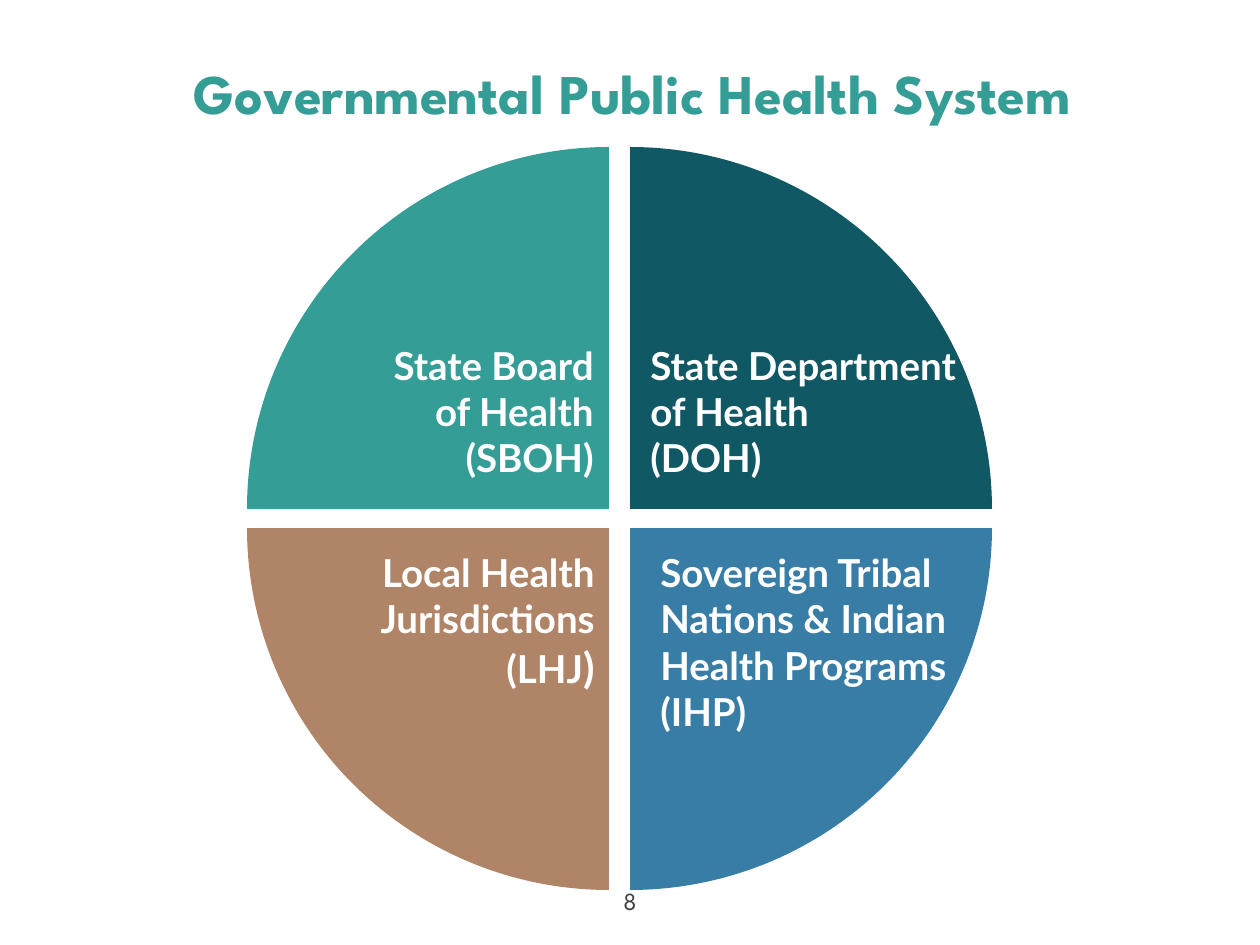
"""Build the slide of the governmental public health system as four quadrants."""
from pptx import Presentation
from pptx.dml.color import RGBColor
from pptx.enum.shapes import MSO_SHAPE
from pptx.enum.text import MSO_ANCHOR as Anchor, PP_ALIGN as Align
from pptx.util import Emu, Pt

TEAL = RGBColor(0x34, 0x9D, 0x96)
DARK_TEAL = RGBColor(0x11, 0x58, 0x65)
BLUE = RGBColor(0x38, 0x7D, 0xA6)
BROWN = RGBColor(0xAF, 0x84, 0x67)
GREY = RGBColor(0x40, 0x40, 0x40)
WHITE = RGBColor(0xFF, 0xFF, 0xFF)
WEDGE = 362
LEFT, RIGHT, TOP, BOTTOM = 247, 630, 147, 528


def px(*lengths):
    return [Emu(round(length * 914400 / 126)) for length in lengths]


def add_text(box, paragraphs, size=22, font="Lato", color=WHITE, bold=True,
             align=Align.LEFT, anchor=Anchor.TOP, spacing=None):
    frame = slide.shapes.add_textbox(*px(*box)).text_frame
    frame.word_wrap = True
    frame.vertical_anchor = anchor
    for index, pieces in enumerate(paragraphs):
        paragraph = frame.add_paragraph() if index else frame.paragraphs[0]
        paragraph.alignment = align
        paragraph.line_spacing = spacing
        for number, line in enumerate(pieces):
            words, points = line if isinstance(line, tuple) else (line, size)
            run = paragraph.add_run()
            run.text = words
            run.font.size = Pt(points)
            run.font.name = font
            run.font.bold = bold
            run.font.color.rgb = color


deck = Presentation()
deck.slide_width, deck.slide_height = px(1260, 945)
slide = deck.slides.add_slide(deck.slide_layouts[6])

add_text((54, 3, 1158, 186), [["Governmental Public Health System"]], size=32,
         font="League Spartan", color=TEAL, align=Align.CENTER,
         anchor=Anchor.MIDDLE, spacing=0.9)
add_text((417, 876, 426, 50), [["8"]], size=14, font="League Spartan",
         color=GREY, bold=False, align=Align.CENTER, anchor=Anchor.MIDDLE)

for left, top, turn, color in (
    (RIGHT, TOP, 90, DARK_TEAL),
    (LEFT, TOP, 0, TEAL),
    (RIGHT, BOTTOM, 180, BLUE),
    (LEFT, BOTTOM, 270, BROWN),
):
    quadrant = slide.shapes.add_shape(
        MSO_SHAPE.PIE_WEDGE, *px(left, top, WEDGE, WEDGE))
    quadrant.rotation = turn
    quadrant.shadow.inherit = False
    quadrant.fill.solid()
    quadrant.fill.fore_color.rgb = color
    quadrant.line.fill.background()

for box, align, paragraphs in (
    ((357, 336, 249, 152), Align.RIGHT, [["State Board of Health"], ["(SBOH)"]]),
    ((638, 336, 346, 152), Align.LEFT, [["State Department of Health"], ["(DOH)"]]),
    ((648, 543, 344, 199), Align.LEFT,
     [["Sovereign Tribal Nations & Indian Health Programs (IHP)"]]),
    ((357, 543, 250, 158), Align.RIGHT,
     [["Local Health Jurisdictions"], ["(LHJ", (")", 24)]]),
):
    add_text(box, paragraphs, align=align)

deck.save("out.pptx")
